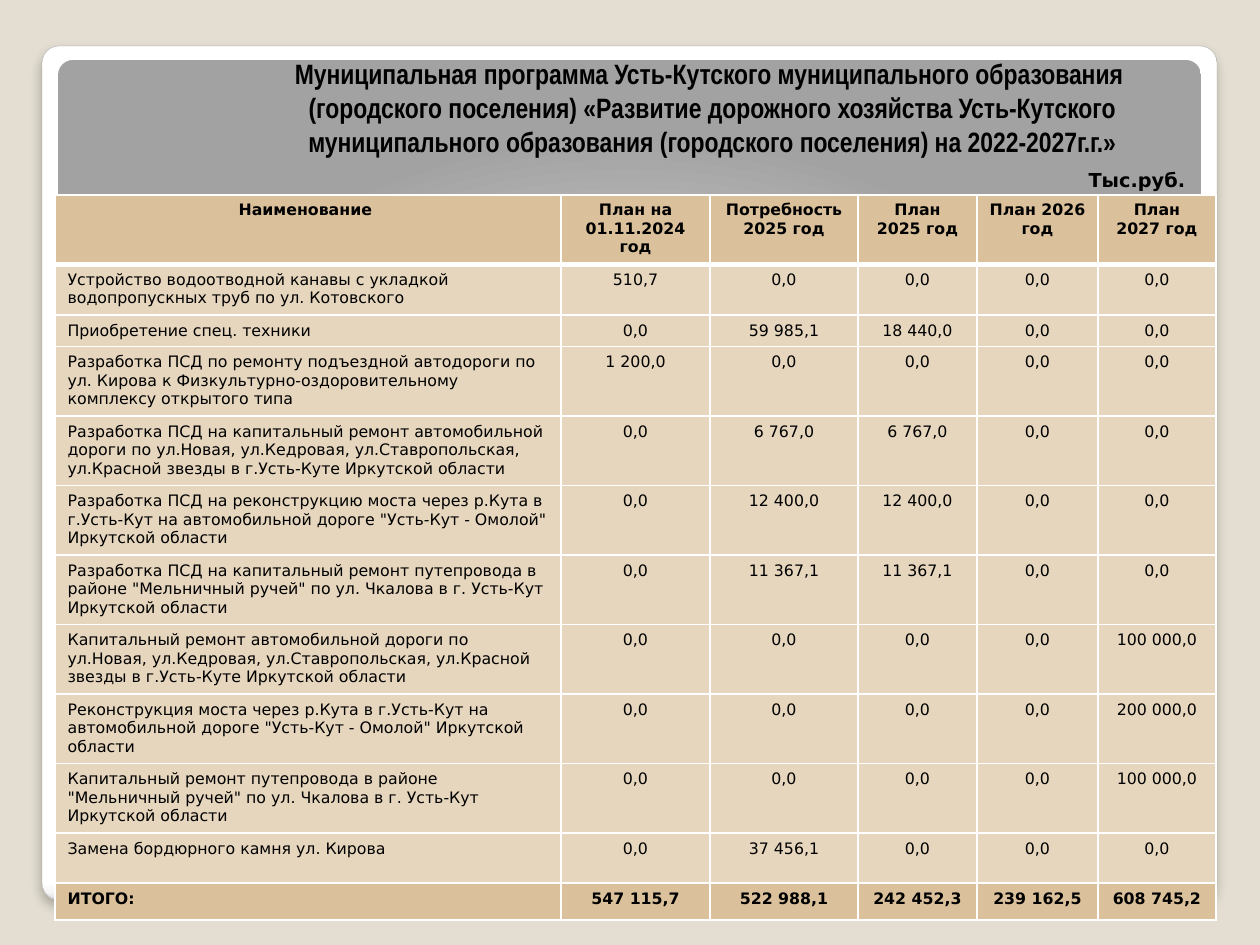
from dataclasses import dataclass

from lxml import etree
from pptx import Presentation
from pptx import util as u
from pptx.dml.color import RGBColor
from pptx.enum import shapes, text
from pptx.oxml import parse_xml
from pptx.oxml.ns import nsdecls, qn

PX = 914400 / 126


@dataclass(frozen=True)
class Theme:
    background: str = "E3DED1"
    ink: str = "000000"
    outline: str = "A4A4A4"
    accent_row: str = "DAC19B"
    body_row: str = "E6D6BD"
    border: str = "FFFFFF"
    title_font: str = "Arial Narrow"
    body_font: str = "DejaVu Sans"
    title_size: int = 16
    unit_size: int = 11
    table_size: int = 9


THEME = Theme()
PANEL_STOPS = [(0, "FFFFFF"), (98, "FFFFFF"), (99, "F7F7F7"), (100, "DADADA")]
BAND_STOPS = [(0, "FFFFFF"), (55, "E1E1E1"), (100, "A2A2A2")]
PANEL_DIRECTION = '<a:lin ang="5400000" scaled="0"/>'
BAND_DIRECTION = ('<a:path path="circle"><a:fillToRect l="50000" t="175000" '
                  'r="50000" b="-75000"/></a:path>')

TITLE_LINES = [
    "Муниципальная программа Усть-Кутского муниципального образования ",
    "(городского поселения) «Развитие дорожного хозяйства Усть-Кутского "
    "муниципального образования (городского поселения) на 2022-2027г.г.»",
]
COLUMN_WIDTHS = [506, 149, 148, 119, 121, 118]
ROW_HEIGHTS = [68, 50, 31] + [68] * 7 + [50, 37]
ROWS = [
    ["Наименование ", "План на 01.11.2024 год", "Потребность 2025 год",
     "План 2025 год", "План 2026 год", "План 2027 год"],
    ["Устройство водоотводной канавы с укладкой водопропускных труб по ул. Котовского",
     "510,7", "0,0", "0,0", "0,0", "0,0"],
    ["Приобретение спец. техники", "0,0", "59 985,1", "18 440,0", "0,0", "0,0"],
    ["Разработка ПСД по ремонту подъездной автодороги по ул. Кирова к "
     "Физкультурно-оздоровительному комплексу открытого типа",
     "1 200,0", "0,0", "0,0", "0,0", "0,0"],
    ["Разработка ПСД на капитальный ремонт автомобильной дороги по ул.Новая, ул.Кедровая, "
     "ул.Ставропольская, ул.Красной звезды в г.Усть-Куте Иркутской области",
     "0,0", "6 767,0", "6 767,0", "0,0", "0,0"],
    ["Разработка ПСД на реконструкцию моста через р.Кута в г.Усть-Кут на автомобильной "
     'дороге "Усть-Кут - Омолой" Иркутской области',
     "0,0", "12 400,0", "12 400,0", "0,0", "0,0"],
    ["Разработка ПСД на капитальный ремонт путепровода в районе "
     '"Мельничный ручей" по ул. Чкалова в г. Усть-Кут Иркутской области',
     "0,0", "11 367,1", "11 367,1", "0,0", "0,0"],
    ["Капитальный ремонт автомобильной дороги по ул.Новая, ул.Кедровая, "
     "ул.Ставропольская, ул.Красной звезды в г.Усть-Куте Иркутской области",
     "0,0", "0,0", "0,0", "0,0", "100 000,0"],
    ["Реконструкция моста через р.Кута в г.Усть-Кут на автомобильной дороге "
     '"Усть-Кут - Омолой" Иркутской области',
     "0,0", "0,0", "0,0", "0,0", "200 000,0"],
    ['Капитальный ремонт путепровода в районе "Мельничный ручей" по ул. Чкалова '
     "в г. Усть-Кут Иркутской области",
     "0,0", "0,0", "0,0", "0,0", "100 000,0"],
    ["Замена бордюрного камня ул. Кирова", "0,0", "37 456,1", "0,0", "0,0", "0,0"],
    ["ИТОГО:", "547 115,7", "522 988,1", "242 452,3", "239 162,5", "608 745,2"],
]


def emu(*lengths):
    """Turn pixel lengths into EMU."""
    return [u.Emu(round(length * PX)) for length in lengths]


def add_run(paragraph, words, font, size, bold):
    """Add one formatted run to a paragraph."""
    run = paragraph.add_run()
    run.text = words
    run.font.name = font
    run.font.size = u.Pt(size)
    run.font.bold = bold
    run.font.color.rgb = RGBColor.from_string(THEME.ink)


def add_gradient_panel(slide, box, stops, direction):
    """Add a rounded rectangle with a gradient fill and no line."""
    shape = slide.shapes.add_shape(shapes.MSO_SHAPE.ROUNDED_RECTANGLE, *emu(*box))
    shape.adjustments[0] = 0.02
    shape.shadow.inherit = False
    shape.line.fill.background()
    marks = "".join(f'<a:gs pos="{place * 1000}"><a:srgbClr val="{color}"/></a:gs>'
                    for place, color in stops)
    gradient = parse_xml(f'<a:gradFill {nsdecls("a")} rotWithShape="1">'
                         f"<a:gsLst>{marks}</a:gsLst>{direction}</a:gradFill>")
    shape._element.spPr.find(qn("a:prstGeom")).addnext(gradient)
    return shape


def add_backdrop(slide, box):
    """Place the white card and the grey header band inside the box."""
    left, top, width, height = box
    card = add_gradient_panel(slide, box, PANEL_STOPS, PANEL_DIRECTION)
    card.line.color.rgb = RGBColor.from_string(THEME.outline)
    card.line.width = u.Pt(0.16)
    effects = card._element.spPr.find(qn("a:effectLst"))
    effects.append(parse_xml(
        f'<a:outerShdw {nsdecls("a")} blurRad="{u.Pt(6)}" dist="{u.Pt(4)}" dir="5400000">'
        '<a:srgbClr val="000000"><a:alpha val="25000"/></a:srgbClr></a:outerShdw>'))
    band = (left + 16, top + 14, width - 32, height - 98)
    add_gradient_panel(slide, band, BAND_STOPS, BAND_DIRECTION)


def add_header(slide, box):
    """Place the title in the box and the unit label below its right end."""
    left, top, width, height = box
    title = slide.shapes.title
    title.left, title.top, title.width, title.height = emu(*box)
    slide.shapes._spTree.append(title._element)
    frame = title.text_frame
    frame.word_wrap = True
    frame.auto_size = text.MSO_AUTO_SIZE.NONE
    frame.vertical_anchor = text.MSO_ANCHOR.BOTTOM
    paragraph = frame.paragraphs[0]
    paragraph.alignment = text.PP_ALIGN.CENTER
    for index, line in enumerate(TITLE_LINES):
        if index:
            paragraph.add_line_break()
        add_run(paragraph, line, THEME.title_font, THEME.title_size, True)

    label = slide.shapes.add_textbox(*emu(left + width - 118, top + height, 126, 31))
    label.text_frame.word_wrap = True
    label.text_frame.vertical_anchor = text.MSO_ANCHOR.MIDDLE
    paragraph = label.text_frame.paragraphs[0]
    paragraph.alignment = text.PP_ALIGN.CENTER
    add_run(paragraph, "Тыс.руб.", THEME.body_font, THEME.unit_size, True)


def set_borders(cell, top, bottom):
    """Draw the four cell borders, with their own top and bottom widths."""
    properties = cell._tc.get_or_add_tcPr()
    sides = {"lnL": 1, "lnR": 1, "lnT": top, "lnB": bottom}
    for index, (side, width) in enumerate(sides.items()):
        line = etree.Element(qn(f"a:{side}"), w=str(u.Pt(width)))
        fill = etree.SubElement(line, qn("a:solidFill"))
        etree.SubElement(fill, qn("a:srgbClr"), val=THEME.border)
        properties.insert(index, line)


def add_budget_table(slide, box):
    """Place the budget table in the box."""
    table = slide.shapes.add_table(len(ROWS), len(COLUMN_WIDTHS), *emu(*box)).table
    table.horz_banding = False
    for column, width in zip(table.columns, emu(*COLUMN_WIDTHS)):
        column.width = width
    for row, height in zip(table.rows, emu(*ROW_HEIGHTS)):
        row.height = height
    for row_index, values in enumerate(ROWS):
        accent = row_index in (0, len(ROWS) - 1)
        color = THEME.accent_row if accent else THEME.body_row
        for column_index, value in enumerate(values):
            cell = table.cell(row_index, column_index)
            cell.fill.solid()
            cell.fill.fore_color.rgb = RGBColor.from_string(color)
            set_borders(cell, 3 if row_index == 1 else 1, 3 if row_index == 0 else 1)
            paragraph = cell.text_frame.paragraphs[0]
            centered = column_index > 0 or row_index == 0
            paragraph.alignment = text.PP_ALIGN.CENTER if centered else text.PP_ALIGN.LEFT
            add_run(paragraph, value, THEME.body_font, THEME.table_size, accent)


def main():
    """Build the slide and save it."""
    presentation = Presentation()
    presentation.slide_width, presentation.slide_height = emu(1260, 945)
    slide = presentation.slides.add_slide(presentation.slide_layouts[5])
    slide.background.fill.solid()
    slide.background.fill.fore_color.rgb = RGBColor.from_string(THEME.background)
    add_backdrop(slide, (42, 46, 1175, 854))
    add_header(slide, (233, 56, 959, 108))
    add_budget_table(slide, (55, 195, sum(COLUMN_WIDTHS), sum(ROW_HEIGHTS)))
    presentation.save("out.pptx")


if __name__ == "__main__":
    main()
